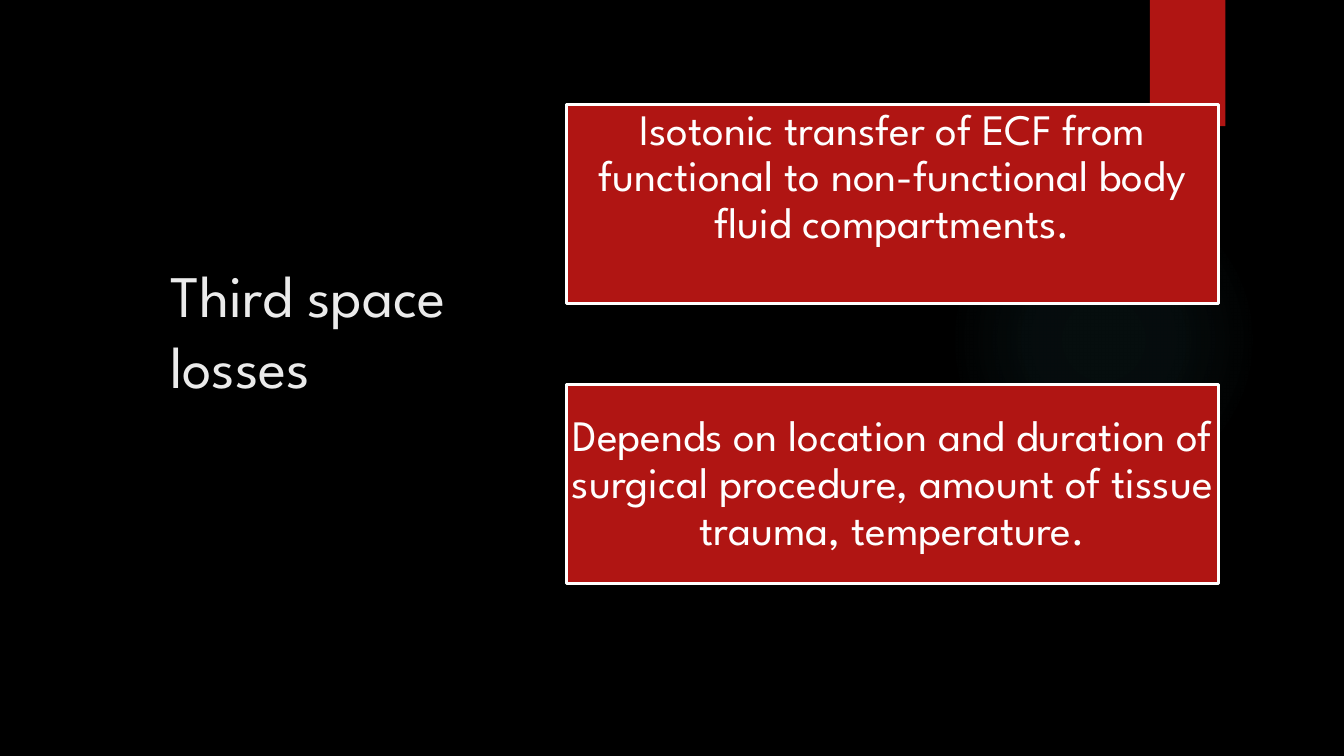
import copy
from dataclasses import dataclass

import lxml.etree
import pptx
import pptx.dml.color
import pptx.enum.shapes
import pptx.enum.text
import pptx.oxml
import pptx.oxml.ns
import pptx.util

Cm, Pt = pptx.util.Cm, pptx.util.Pt
qn = pptx.oxml.ns.qn
SHAPE = pptx.enum.shapes.MSO_SHAPE
ANCHOR = pptx.enum.text.MSO_ANCHOR
ALIGN = pptx.enum.text.PP_ALIGN

TITLE = "Third space losses"
# (text, ends with an empty line)
CARDS = [
    ("Isotonic transfer of ECF from functional to non-functional body "
     "fluid compartments.", True),
    ("Depends on location and duration of surgical procedure, amount of "
     "tissue trauma, temperature.", False),
]

# left, top, width, height in cm
GLOW_BOX = (23.9, 4.65, 7.82, 7.82)
TAB_BOX = (28.98, 0, 1.9, 3.18)
TITLE_BOX = (4.04, 6.4, 9.09, 7.42)
CARD_BOX = (14.27, 2.64, 16.43, 5)
CARD_STEP = 7.06
GLOW_STOPS = [(0, 7), (36, 6), (69, 0)]  # position and opacity, percent


@dataclass(frozen=True)
class Theme:
    font: str = "League Spartan"
    background: str = "000000"
    red: str = "B01513"
    glow: str = "50B9C1"
    title: str = "EBEBEB"
    white: str = "FFFFFF"
    title_size: int = 42
    card_size: int = 31
    border: float = 2.25


THEME = Theme()


def rgb(value):
    return pptx.dml.color.RGBColor.from_string(value)


def add_block(s, kind, box, fill):
    sp = s.shapes.add_shape(kind, *map(Cm, box))
    sp.shadow.inherit = False
    sp.fill.solid()
    sp.fill.fore_color.rgb = rgb(fill)
    sp.line.fill.background()
    return sp


def add_run(p, text, size, color):
    r = p.add_run()
    r.text = text
    r.font.name = THEME.font
    r.font.size = Pt(size)
    r.font.color.rgb = rgb(color)
    return r


def add_empty_line(p, r):
    """Break after run r, keeping its type size on the empty line."""
    p.add_line_break()
    rpr = r._r.find(qn("a:rPr"))
    p._p.findall(qn("a:br"))[-1].append(copy.deepcopy(rpr))
    end = lxml.etree.SubElement(p._p, qn("a:endParaRPr"))
    end.set("sz", rpr.get("sz"))
    for child in rpr:
        end.append(copy.deepcopy(child))


def add_glow(s):
    sp = add_block(s, SHAPE.OVAL, GLOW_BOX, THEME.glow)
    stops = "".join(
        f'<a:gs pos="{pos * 1000}"><a:srgbClr val="{THEME.glow}">'
        f'<a:alpha val="{alpha * 1000}"/></a:srgbClr></a:gs>'
        for pos, alpha in GLOW_STOPS)
    gradient = pptx.oxml.parse_xml(
        f'<a:gradFill {pptx.oxml.ns.nsdecls("a")}><a:gsLst>{stops}</a:gsLst>'
        '<a:path path="circle"><a:fillToRect l="50000" t="50000" '
        'r="50000" b="50000"/></a:path></a:gradFill>')
    sppr = sp._element.spPr
    sppr.replace(sppr.find(qn("a:solidFill")), gradient)


def add_title(s):
    tf = s.shapes.add_textbox(*map(Cm, TITLE_BOX)).text_frame
    tf.word_wrap = True
    tf.vertical_anchor = ANCHOR.TOP
    p = tf.paragraphs[0]
    p.alignment = ALIGN.LEFT
    add_run(p, TITLE, THEME.title_size, THEME.title)


def add_card(s, index, text, empty_line):
    left, top, width, height = CARD_BOX
    box = (left, top + index * CARD_STEP, width, height)
    sp = add_block(s, SHAPE.RECTANGLE, box, THEME.red)
    sp.line.color.rgb = rgb(THEME.white)
    sp.line.width = Pt(THEME.border)
    tf = sp.text_frame
    tf.word_wrap = True
    tf.vertical_anchor = ANCHOR.MIDDLE
    tf.margin_left = tf.margin_right = Cm(0.05)
    tf.margin_top = tf.margin_bottom = Cm(0.05)
    p = tf.paragraphs[0]
    p.alignment = ALIGN.CENTER
    p.line_spacing = 0.9
    r = add_run(p, text, THEME.card_size, THEME.white)
    if empty_line:
        add_empty_line(p, r)


def main():
    prs = pptx.Presentation()
    prs.slide_width, prs.slide_height = Cm(33.87), Cm(19.05)
    s = prs.slides.add_slide(prs.slide_layouts[6])
    s.background.fill.solid()
    s.background.fill.fore_color.rgb = rgb(THEME.background)
    add_glow(s)
    add_block(s, SHAPE.RECTANGLE, TAB_BOX, THEME.red)
    add_title(s)
    for index, (text, empty_line) in enumerate(CARDS):
        add_card(s, index, text, empty_line)
    prs.save("out.pptx")


if __name__ == "__main__":
    main()
